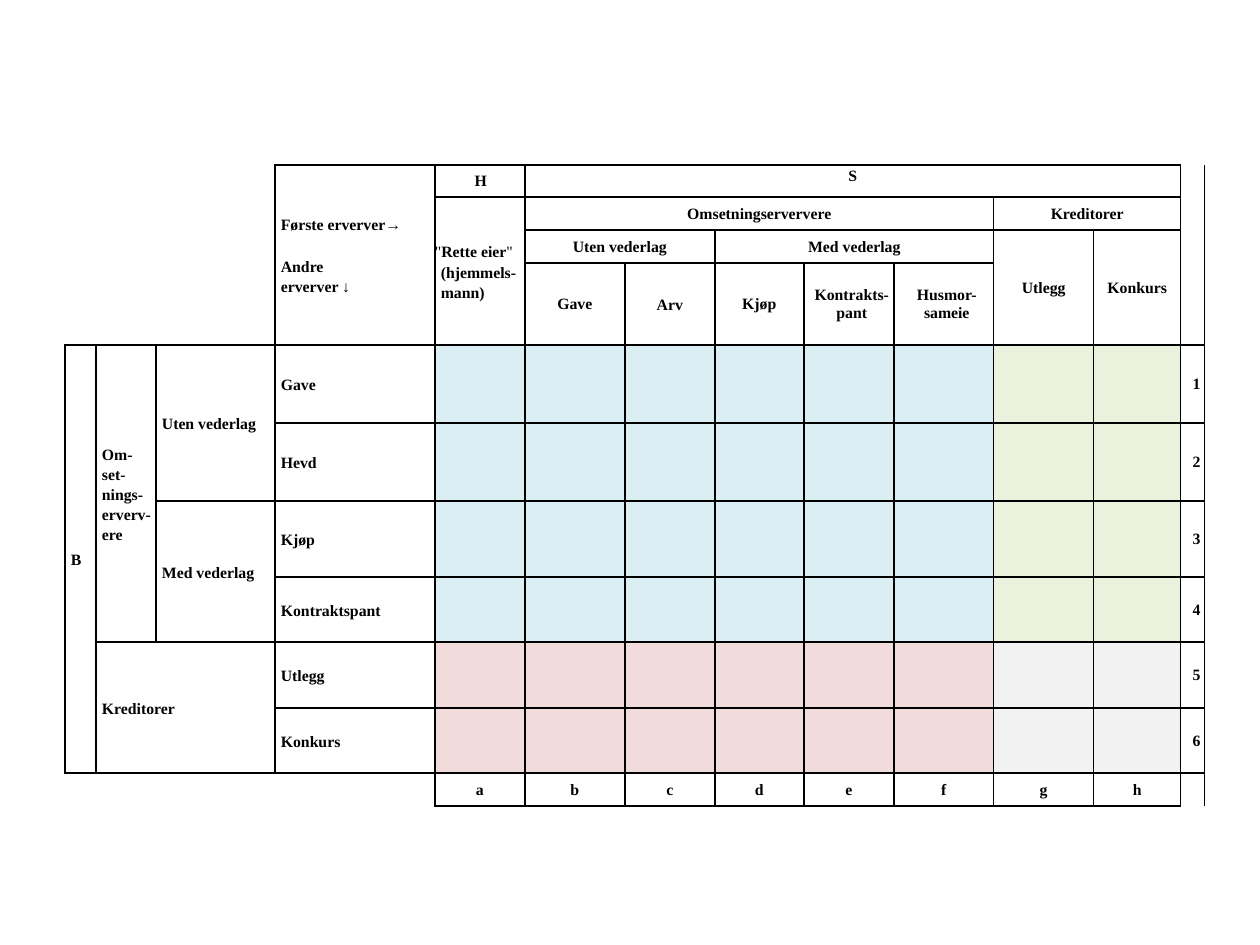
"""Build a slide with a matrix of first and second acquirers."""

from dataclasses import dataclass
from itertools import product

from lxml import etree
from pptx import Presentation
from pptx import util as u
from pptx.dml.color import RGBColor
from pptx.enum import text
from pptx.oxml import ns

PX = 914400 / 126
FONT = "Times New Roman"
SIZE = u.Pt(9)
TIGHT = u.Pt(10.4)
LOOSE = 1.15
NO_GRID_STYLE = "{2D5ABB26-0587-4C30-8999-92F81FD0307C}"

BLACK = RGBColor(0x00, 0x00, 0x00)
BLUE = RGBColor(0xDA, 0xEE, 0xF3)
GREEN = RGBColor(0xEA, 0xF1, 0xDD)
PINK = RGBColor(0xF2, 0xDB, 0xDB)
GREY = RGBColor(0xF2, 0xF2, 0xF2)

LEFT, TOP = 65, 165
COLUMN_WIDTHS = (31, 60, 119, 160, 90, 100, 90, 89, 90, 100, 100, 87, 24)
ROW_HEIGHTS = (32, 33, 33, 82, 78, 78, 76, 65, 66, 65, 33)
FIRST_ROW, FIRST_COLUMN = 4, 4
CREDITOR_ROW, CREDITOR_COLUMN = 8, 10
INDENT = 6


@dataclass(frozen=True)
class Run:
    words: str
    bold: bool = True


@dataclass(frozen=True)
class Line:
    runs: tuple[Run, ...]
    indent: int = 0
    before: float = 0


@dataclass(frozen=True)
class Region:
    row: int
    column: int
    lines: tuple[Line, ...] = ()
    rows: int = 1
    columns: int = 1
    centred: bool = False
    spacing: float = LOOSE
    anchor: text.MSO_ANCHOR = text.MSO_ANCHOR.MIDDLE
    fill: RGBColor | None = None
    sides: str = "LRTB"


def px(length: int) -> u.Emu:
    """Turn whole pixels into EMU."""
    return u.Emu(round(length * PX))


def line(words: str, indent: int = 0, before: float = 0) -> Line:
    """Make a line of one bold run."""
    return Line((Run(words),), indent, before)


def heading(row: int, column: int, words: str, rows: int = 1, columns: int = 1,
            indent: int = 0, spacing: float = TIGHT) -> Region:
    """Make a centred heading region."""
    return Region(row, column, (line(words, indent),), rows, columns, True, spacing)


def label(row: int, column: int, *words: str, rows: int = 1, columns: int = 1) -> Region:
    """Make a left-aligned label region."""
    lines = tuple(line(part, INDENT) for part in words)
    return Region(row, column, lines, rows, columns)


def body_fill(row: int, column: int) -> RGBColor:
    """Choose the colour of a matrix cell by its quadrant."""
    if row < CREDITOR_ROW:
        return BLUE if column < CREDITOR_COLUMN else GREEN
    return PINK if column < CREDITOR_COLUMN else GREY


def write_lines(cell, region: Region) -> None:
    """Write the lines of a region into its first cell."""
    frame = cell.text_frame
    for index, item in enumerate(region.lines):
        paragraph = frame.paragraphs[0] if index == 0 else frame.add_paragraph()
        paragraph.alignment = text.PP_ALIGN.CENTER if region.centred else text.PP_ALIGN.LEFT
        paragraph.line_spacing = region.spacing
        if item.before:
            paragraph.space_before = u.Pt(item.before)
        paragraph._p.get_or_add_pPr().set("marL", str(px(item.indent)))
        for part in item.runs:
            for position, words in enumerate(part.words.split("\n")):
                if position:
                    paragraph.add_line_break()
                run = paragraph.add_run()
                run.text = words
                run.font.name = FONT
                run.font.size = SIZE
                run.font.bold = part.bold
                run.font.color.rgb = BLACK


def add_border(cell, side: str) -> None:
    """Add a black border to one side of a cell."""
    border = etree.SubElement(cell._tc.get_or_add_tcPr(), ns.qn(f"a:ln{side}"), w=str(u.Pt(1)))
    solid = etree.SubElement(border, ns.qn("a:solidFill"))
    etree.SubElement(solid, ns.qn("a:srgbClr"), val=str(BLACK))


def draw_region(table, region: Region) -> None:
    """Merge, border, fill and write one region."""
    last_row = region.row + region.rows - 1
    last_column = region.column + region.columns - 1
    first = table.cell(region.row, region.column)
    for row, column in product(range(region.row, last_row + 1),
                               range(region.column, last_column + 1)):
        cell = table.cell(row, column)
        cell.margin_left = cell.margin_right = cell.margin_top = cell.margin_bottom = 0
        cell.vertical_anchor = region.anchor
        outer = {"L": column == region.column, "R": column == last_column,
                 "T": row == region.row, "B": row == last_row}
        for side, is_outer in outer.items():
            if is_outer and side in region.sides:
                add_border(cell, side)
        if region.fill is None:
            cell.fill.background()
        else:
            cell.fill.solid()
            cell.fill.fore_color.rgb = region.fill
        if cell is first or not region.lines or (row, column) != (region.row, region.column):
            etree.SubElement(cell.text_frame.paragraphs[0]._p, ns.qn("a:endParaRPr"),
                             sz=str(round(SIZE.pt * 100)))
    if region.rows * region.columns > 1:
        first.merge(table.cell(last_row, last_column))
    write_lines(first, region)


def matrix_regions() -> list[Region]:
    """List all regions of the matrix."""
    corners = [
        Region(0, 0, rows=4, columns=3, sides="RB"),
        Region(0, 12, rows=4, sides="LB"),
        Region(10, 0, columns=4, sides="TR"),
        Region(10, 12, sides="LT"),
    ]
    headings = [
        Region(0, 3, (line("Første erverver→", INDENT),
                      line("Andre \nerverver ↓", INDENT, 12.5)), rows=4),
        heading(0, 4, "H", indent=2),
        Region(0, 5, (line("S"),), columns=7, centred=True, anchor=text.MSO_ANCHOR.TOP),
        Region(1, 4, (Line((Run('"', False), Run("Rette eier"), Run('"', False))),
                      line("(hjemmels-mann)", INDENT, 0.5)), rows=3),
        heading(1, 5, "Omsetningserververe", columns=5),
        heading(1, 10, "Kreditorer", columns=2),
        heading(2, 5, "Uten vederlag", columns=2),
        heading(2, 7, "Med vederlag", columns=3),
        heading(2, 10, "Utlegg", rows=2),
        heading(2, 11, "Konkurs", rows=2),
        heading(3, 5, "Gave"),
        heading(3, 6, "Arv", spacing=LOOSE),
        heading(3, 7, "Kjøp"),
        heading(3, 8, "Kontrakts-pant", indent=INDENT),
        heading(3, 9, "Husmor-sameie", indent=INDENT),
    ]
    groups = [
        label(4, 0, "B", rows=6),
        label(4, 1, "Om-", "set-nings-erverv-ere", rows=4),
        label(4, 2, "Uten vederlag", rows=2),
        label(6, 2, "Med vederlag", rows=2),
        label(8, 1, "Kreditorer", rows=2, columns=2),
    ]
    names = ("Gave", "Hevd", "Kjøp", "Kontraktspant", "Utlegg", "Konkurs")
    labels = [label(row, 3, name) for row, name in enumerate(names, FIRST_ROW)]
    numbers = [heading(row, 12, number, indent=8) for row, number in enumerate("123456", FIRST_ROW)]
    letters = [heading(10, column, letter) for column, letter in enumerate("abcdefgh", FIRST_COLUMN)]
    body = [Region(row, column, fill=body_fill(row, column))
            for row, column in product(range(FIRST_ROW, 10), range(FIRST_COLUMN, 12))]
    return corners + headings + groups + labels + numbers + letters + body


def main() -> None:
    """Build and save the presentation."""
    presentation = Presentation()
    presentation.slide_width, presentation.slide_height = px(1260), px(945)
    slide = presentation.slides.add_slide(presentation.slide_layouts[6])
    shape = slide.shapes.add_table(len(ROW_HEIGHTS), len(COLUMN_WIDTHS), px(LEFT), px(TOP),
                                   px(sum(COLUMN_WIDTHS)), px(sum(ROW_HEIGHTS)))
    table = shape.table
    table.first_row = table.horz_banding = False
    table._tbl.tblPr.find(ns.qn("a:tableStyleId")).text = NO_GRID_STYLE
    for column, width in zip(table.columns, COLUMN_WIDTHS):
        column.width = px(width)
    for row, height in zip(table.rows, ROW_HEIGHTS):
        row.height = px(height)
    for region in matrix_regions():
        draw_region(table, region)
    presentation.save("out.pptx")


if __name__ == "__main__":
    main()
